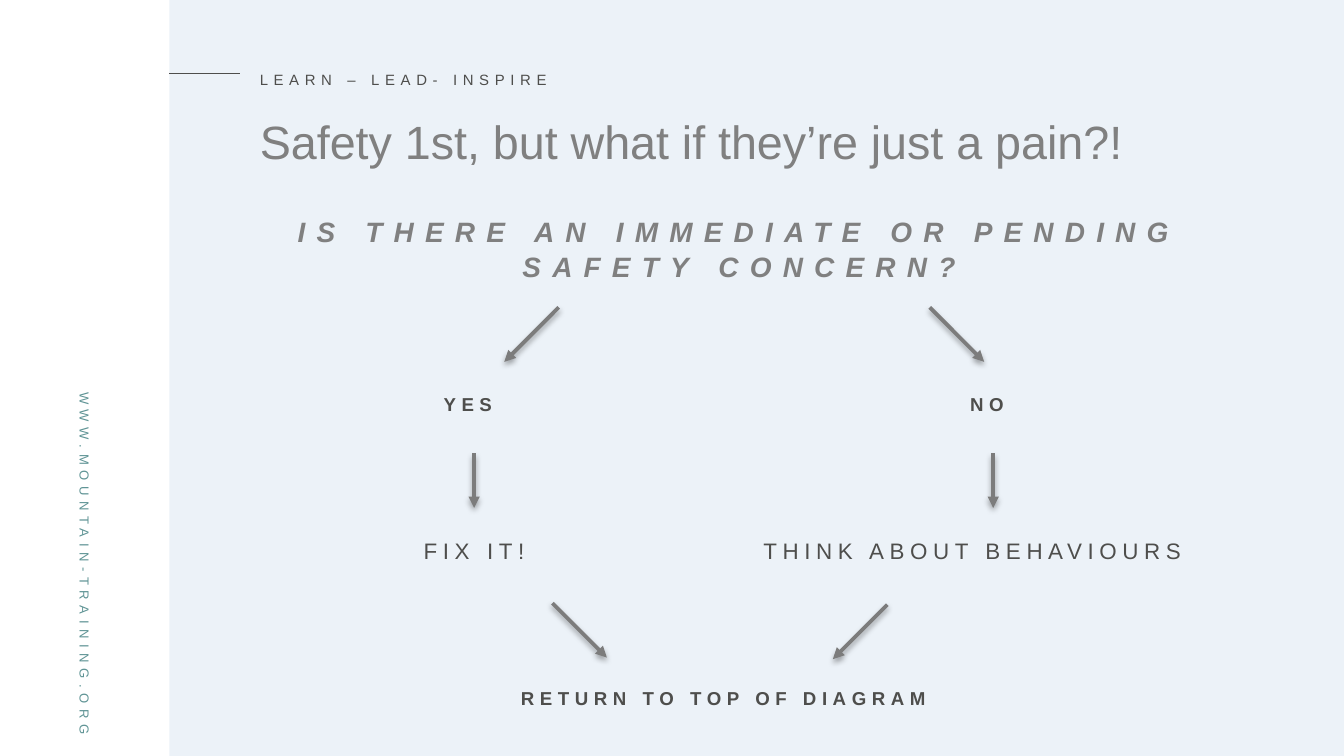
from dataclasses import dataclass

import lxml.etree
import pptx
import pptx.dml.color
import pptx.enum.shapes
import pptx.enum.text
import pptx.oxml
import pptx.oxml.ns
import pptx.shapes.autoshape
import pptx.shapes.connector
import pptx.slide
import pptx.util

Cm = pptx.util.Cm
Pt = pptx.util.Pt
RGBColor = pptx.dml.color.RGBColor
Align = pptx.enum.text.PP_ALIGN
Anchor = pptx.enum.text.MSO_ANCHOR
qn = pptx.oxml.ns.qn

PANEL_BLUE = RGBColor(0xEC, 0xF2, 0xF8)
TEAL = RGBColor(0x5F, 0x94, 0x95)
CHARCOAL = RGBColor(0x4E, 0x4E, 0x4C)
HEADING_GREY = RGBColor(0x80, 0x80, 0x80)
ARROW_GREY = RGBColor(0x7C, 0x7C, 0x7C)

FONT = "Arial"
SLIDE_WIDTH, SLIDE_HEIGHT = 25.4, 14.29
PANEL_LEFT = 3.2
CONTENT_LEFT, CONTENT_WIDTH = 4.78, 17.78
COLUMN_WIDTH = 8.36
INSET = 0.13
ARROW_LENGTH = 1.03

SHADOW = (
    '<a:effectLst xmlns:a="http://schemas.openxmlformats.org/drawingml/2006/main">'
    '<a:outerShdw blurRad="38100" dist="22860" dir="5400000" rotWithShape="0">'
    '<a:srgbClr val="000000"><a:alpha val="35000"/></a:srgbClr>'
    '</a:outerShdw></a:effectLst>'
)


@dataclass(frozen=True)
class Label:
    """One line of text with its frame in centimetres."""
    text: str
    left: float
    top: float
    width: float
    height: float
    size: float
    color: RGBColor = CHARCOAL
    tracking: float = 3
    bold: bool = False
    italic: bool = False
    align: Align = Align.CENTER
    anchor: Anchor = Anchor.TOP
    line_spacing: float = 1.0
    rotation: float = 0


@dataclass(frozen=True)
class Arrow:
    """Downward arrow; drift is -1 for left, 0 for straight, 1 for right."""
    x: float
    y: float
    drift: int


PLACEHOLDER_LABELS = [
    Label("Safety 1st, but what if they’re just a pain?!", CONTENT_LEFT, 1.12,
          CONTENT_WIDTH, 3.07, 25, HEADING_GREY, tracking=0,
          align=Align.LEFT, anchor=Anchor.MIDDLE),
    Label("IS THERE AN IMMEDIATE OR PENDING SAFETY CONCERN?", 5.08, 3.89,
          CONTENT_WIDTH, 1.78, 15, HEADING_GREY, tracking=6,
          bold=True, italic=True, line_spacing=1.05),
    Label("FIX IT!", CONTENT_LEFT, 10.03, COLUMN_WIDTH, 0.75, 12),
    Label("THINK ABOUT BEHAVIOURS", 14.2, 10.03, COLUMN_WIDTH, 0.75, 12),
]

TEXT_BOX_LABELS = [
    Label("WWW.MOUNTAIN-TRAINING.ORG", -2.17, 9.96, 7.62, 0.48, 7, TEAL,
          align=Align.RIGHT, rotation=90),
    Label("LEARN – LEAD- INSPIRE", CONTENT_LEFT, 1.2, CONTENT_WIDTH, 0.61, 8,
          align=Align.LEFT),
    Label("YES", 7.34, 7.29, 3, 0.64, 10, bold=True),
    Label("NO", 17.15, 7.29, 3, 0.64, 10, bold=True),
    Label("RETURN TO TOP OF DIAGRAM", CONTENT_LEFT, 12.85, CONTENT_WIDTH, 0.64,
          10, bold=True),
]

ARROWS = [
    Arrow(17.57, 5.81, 1),
    Arrow(10.56, 5.81, -1),
    Arrow(8.96, 8.57, 0),
    Arrow(18.77, 8.57, 0),
    Arrow(16.77, 11.43, -1),
    Arrow(10.44, 11.4, 1),
]


def write_label(box: pptx.shapes.autoshape.Shape, label: Label) -> None:
    """Place the box and fill it with the label's formatted text."""
    box.left, box.top = Cm(label.left), Cm(label.top)
    box.width, box.height = Cm(label.width), Cm(label.height)
    box.rotation = label.rotation
    frame = box.text_frame
    frame.word_wrap = True
    frame.auto_size = pptx.enum.text.MSO_AUTO_SIZE.NONE
    frame.vertical_anchor = label.anchor
    frame.margin_left = frame.margin_right = Cm(INSET)
    frame.margin_top = frame.margin_bottom = Cm(INSET)

    para = frame.paragraphs[0]
    properties = para._p.get_or_add_pPr()
    properties.set("marL", "0")
    properties.set("indent", "0")
    lxml.etree.SubElement(properties, qn("a:buNone"))
    para.alignment = label.align
    para.line_spacing = label.line_spacing
    para.space_before = para.space_after = Pt(0)

    span = para.add_run()
    span.text = label.text
    span.font.name = FONT
    span.font.size = Pt(label.size)
    span.font.bold = label.bold
    span.font.italic = label.italic
    span.font.color.rgb = label.color
    span._r.get_or_add_rPr().set("spc", str(round(label.tracking * 100)))


def draw_line(page: pptx.slide.Slide, x1: float, y1: float, x2: float, y2: float,
              color: RGBColor, weight: float) -> pptx.shapes.connector.Connector:
    line = page.shapes.add_connector(
        pptx.enum.shapes.MSO_CONNECTOR.STRAIGHT, Cm(x1), Cm(y1), Cm(x2), Cm(y2))
    line.line.color.rgb = color
    line.line.width = Pt(weight)
    return line


def draw_arrow(page: pptx.slide.Slide, arrow: Arrow) -> None:
    line = draw_line(page, arrow.x, arrow.y, arrow.x + arrow.drift * ARROW_LENGTH,
                     arrow.y + ARROW_LENGTH, ARROW_GREY, 2)
    outline = line.line._get_or_add_ln()
    lxml.etree.SubElement(outline, qn("a:tailEnd"), type="triangle")
    line._element.spPr.append(pptx.oxml.parse_xml(SHADOW))


def draw_panel(page: pptx.slide.Slide) -> None:
    """Draw the pale panel behind everything, with its short rule."""
    panel = page.shapes.add_shape(
        pptx.enum.shapes.MSO_SHAPE.RECTANGLE, Cm(PANEL_LEFT), 0,
        Cm(SLIDE_WIDTH - PANEL_LEFT), Cm(SLIDE_HEIGHT))
    panel.shadow.inherit = False
    panel.fill.solid()
    panel.fill.fore_color.rgb = PANEL_BLUE
    panel.line.fill.background()
    page.shapes._spTree.insert(2, panel._element)

    rule = draw_line(page, PANEL_LEFT, 1.39, 4.54, 1.39, CHARCOAL, 1)
    lxml.etree.SubElement(rule._element.spPr, qn("a:effectLst"))


def main() -> None:
    deck = pptx.Presentation()
    deck.slide_width, deck.slide_height = Cm(SLIDE_WIDTH), Cm(SLIDE_HEIGHT)
    comparison_layout = deck.slide_layouts[4]
    page = deck.slides.add_slide(comparison_layout)

    *boxes, spare = list(page.placeholders)
    spare._element.getparent().remove(spare._element)
    for box, label in zip(boxes, PLACEHOLDER_LABELS):
        write_label(box, label)

    draw_panel(page)
    for label in TEXT_BOX_LABELS:
        write_label(page.shapes.add_textbox(0, 0, 0, 0), label)
    for arrow in ARROWS:
        draw_arrow(page, arrow)

    deck.save("out.pptx")


if __name__ == "__main__":
    main()
